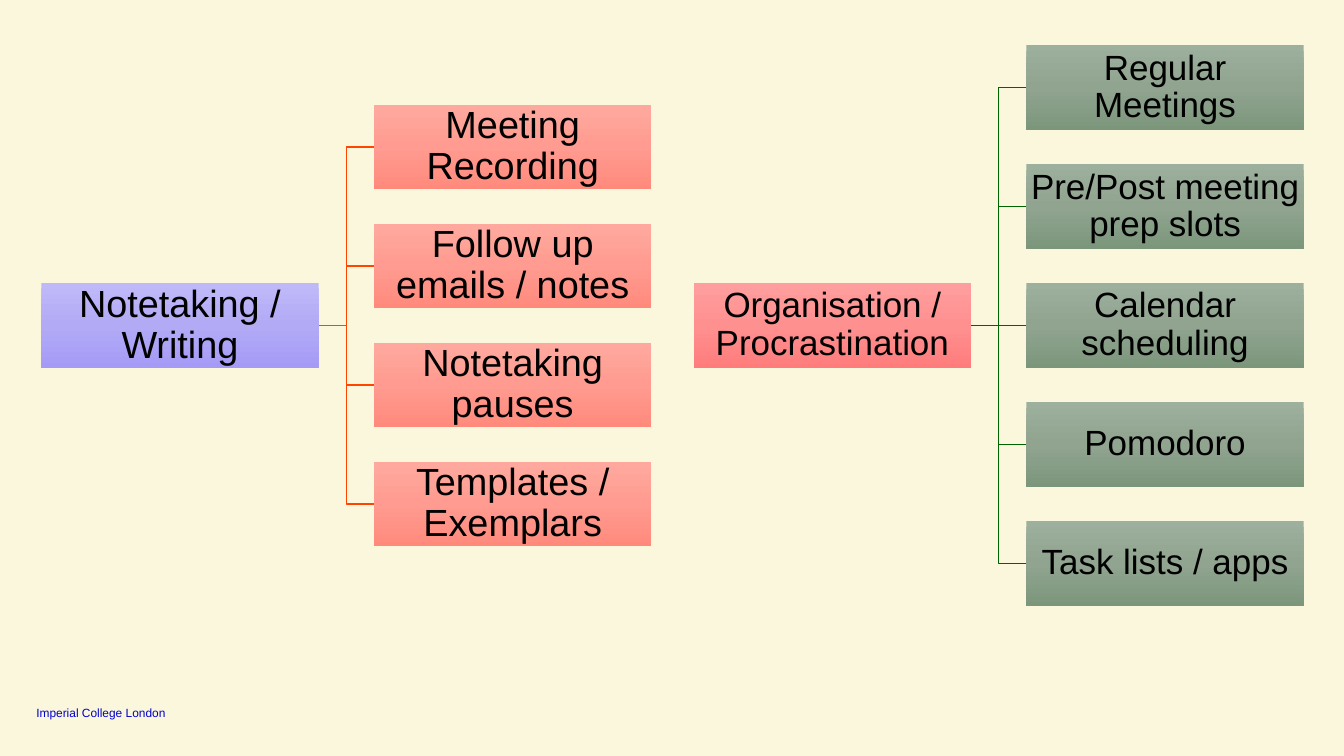
import copy
from dataclasses import dataclass

import pptx
import pptx.dml.color
import pptx.enum.shapes
import pptx.enum.text
import pptx.oxml
import pptx.oxml.ns
import pptx.util

Inches = pptx.util.Inches
Pt = pptx.util.Pt

BOX_WIDTH = 2.75
BOX_HEIGHT = 0.84
BRANCH_PITCH = 1.18
CENTRE_Y = 3.23
COLUMN_GAP = 0.55


@dataclass
class Tree:
    left: float
    root: str
    branches: list[str]
    root_colours: tuple[str, str, str]
    branch_colours: tuple[str, str, str]
    line_colour: str
    font_size: float


TREES = [
    Tree(0.41, "Notetaking / Writing",
         ["Meeting Recording", "Follow up emails / notes", "Notetaking pauses",
          "Templates / Exemplars"],
         ("C0B9F8", "B2AAF5", "A59BF7"), ("FFA99E", "FF9B90", "FF8A7C"), "FF4500", 27),
    Tree(6.88, "Organisation / Procrastination",
         ["Regular Meetings", "Pre/Post meeting prep slots", "Calendar scheduling",
          "Pomodoro", "Task lists / apps"],
         ("FF9E9E", "FF9090", "FF7C7C"), ("9DB09D", "90A490", "7C967C"), "006400", 25),
]


def rgb(colour: str) -> pptx.dml.color.RGBColor:
    return pptx.dml.color.RGBColor.from_string(colour)


def set_text(text_frame, text: str, size: float, colour: str, margin: float) -> None:
    text_frame.text = text
    text_frame.word_wrap = True
    text_frame.margin_left = text_frame.margin_right = Inches(margin)
    text_frame.margin_top = text_frame.margin_bottom = Inches(margin)
    font = text_frame.paragraphs[0].runs[0].font
    font.name = "Arial"
    font.size = Pt(size)
    font.color.rgb = rgb(colour)


def fill_gradient(shape, colours: tuple[str, str, str]) -> None:
    """Fill from top to bottom with three evenly spaced colours."""
    shape.fill.gradient()
    shape.fill.gradient_angle = 270
    stop_list = shape._element.spPr.find(".//" + pptx.oxml.ns.qn("a:gsLst"))
    stop_list.insert(1, copy.deepcopy(stop_list[0]))
    for index, (stop, colour) in enumerate(zip(shape.fill.gradient_stops, colours)):
        stop.position = index / 2
        stop.color.rgb = rgb(colour)


def add_box(slide, left: float, centre_y: float, text: str,
            colours: tuple[str, str, str], size: float) -> None:
    shape = slide.shapes.add_shape(
        pptx.enum.shapes.MSO_SHAPE.RECTANGLE, Inches(left),
        Inches(centre_y - BOX_HEIGHT / 2), Inches(BOX_WIDTH), Inches(BOX_HEIGHT))
    shape.shadow.inherit = False
    shape.line.fill.background()
    fill_gradient(shape, colours)
    set_text(shape.text_frame, text, size, "000000", 0.02)
    shape.text_frame.vertical_anchor = pptx.enum.text.MSO_ANCHOR.MIDDLE
    paragraph = shape.text_frame.paragraphs[0]
    paragraph.alignment = pptx.enum.text.PP_ALIGN.CENTER
    paragraph.line_spacing = 0.9


def add_link(slide, left: float, branch_y: float, colour: str) -> None:
    """Join a root to a branch, with an elbow unless they are level."""
    start_x, middle_x, end_x = (
        Inches(left + COLUMN_GAP * part) for part in (0, 0.5, 1))
    start_y, end_y = Inches(CENTRE_Y), Inches(branch_y)
    if start_y == end_y:
        link = slide.shapes.add_connector(
            pptx.enum.shapes.MSO_CONNECTOR.STRAIGHT, start_x, start_y, end_x, end_y)
        link._element.spPr.append(pptx.oxml.parse_xml(
            f"<a:effectLst {pptx.oxml.ns.nsdecls('a')}/>"))
    else:
        builder = slide.shapes.build_freeform(start_x, start_y)
        builder.add_line_segments(
            [(middle_x, start_y), (middle_x, end_y), (end_x, end_y)], close=False)
        link = builder.convert_to_shape()
        link.fill.background()
        link.shadow.inherit = False
    link.line.color.rgb = rgb(colour)
    link.line.width = Pt(1)


def add_tree(slide, tree: Tree) -> None:
    link_left = tree.left + BOX_WIDTH
    middle = (len(tree.branches) - 1) / 2
    branch_ys = [CENTRE_Y + (index - middle) * BRANCH_PITCH
                 for index in range(len(tree.branches))]
    for branch_y in reversed(branch_ys):
        add_link(slide, link_left, branch_y, tree.line_colour)
    add_box(slide, tree.left, CENTRE_Y, tree.root, tree.root_colours, tree.font_size)
    for text, branch_y in zip(tree.branches, branch_ys):
        add_box(slide, link_left + COLUMN_GAP, branch_y, text,
                tree.branch_colours, tree.font_size)


def add_footer(slide) -> None:
    footer = slide.shapes.add_textbox(
        Inches(0.36), Inches(6.99), Inches(1.55), Inches(0.15))
    set_text(footer.text_frame, "Imperial College London", 8.5, "0000CD", 0)
    footer.text_frame.vertical_anchor = pptx.enum.text.MSO_ANCHOR.BOTTOM


def main() -> None:
    presentation = pptx.Presentation()
    presentation.slide_width = Inches(13.33)
    presentation.slide_height = Inches(7.5)
    slide = presentation.slides.add_slide(presentation.slide_layouts[6])
    slide.background.fill.solid()
    slide.background.fill.fore_color.rgb = rgb("FBF7DC")
    add_footer(slide)
    for tree in TREES:
        add_tree(slide, tree)
    presentation.save("out.pptx")


if __name__ == "__main__":
    main()
